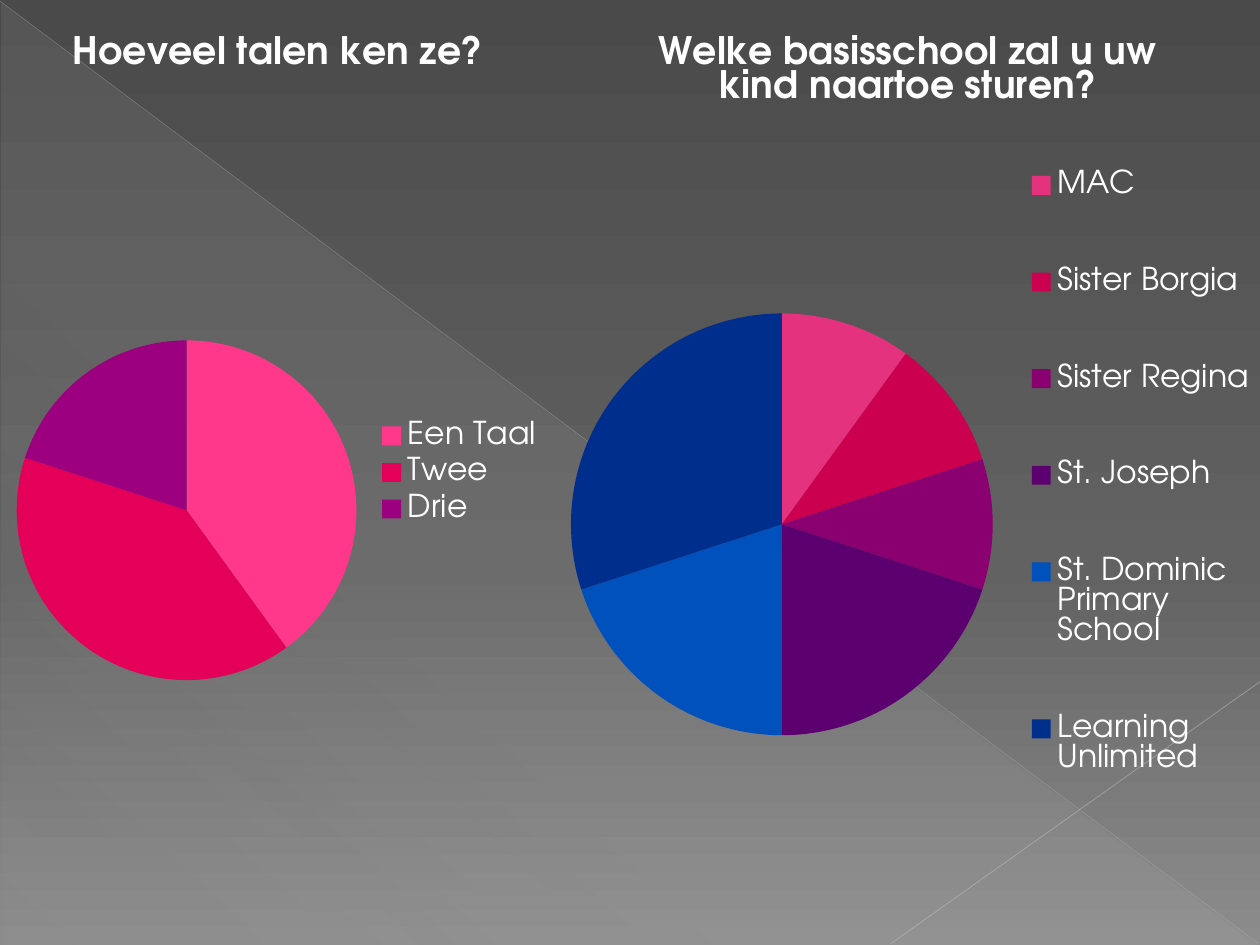
from lxml.etree import SubElement
from pptx import Presentation
from pptx.chart.data import CategoryChartData
from pptx.dml.color import RGBColor
from pptx.enum.chart import XL_CHART_TYPE, XL_LEGEND_POSITION
from pptx.enum.shapes import MSO_CONNECTOR, MSO_SHAPE
from pptx.oxml import parse_xml
from pptx.oxml.ns import nsdecls, qn
from pptx.util import Pt

FONT = "TeX Gyre Adventor"
WIDTH, HEIGHT = 720, 540
SPLIT = 318.24
COLORS = {
    "text": "FFFFFF", "diagonal": "BFBFBF", "corner": "C6C6C6",
    "pink": "FF388C", "red": "E40059", "purple": "9C007F",
    "dark pink": "E5327E", "dark red": "CB004F", "dark purple": "8A0070",
    "violet": "5C0070", "blue": "0051BC", "navy": "002E8C",
}
# Gradient stops: position in percent, colour, opacity in percent
BACKGROUND = [(0, "4A4A4A", 100), (60, "626262", 100), (100, "8C8C8C", 100)]
SHEEN = [(0, "D2D2D2", 10), (70, "D2D2D2", 8), (100, "D2D2D2", 1)]
# Start, end, colour, width, opacity in percent
LINES = [
    ((0, 0.72), (719.28, 539.28), "diagonal", 0.39, 35),
    ((720, 389.52), (509.04, 539.28), "corner", 0.47, 45),
]
# Layouts are x, y, width, height as fractions of the chart
CHARTS = [
    {
        "title": "Hoeveel talen ken ze?",
        "left": 0, "width": SPLIT,
        "slices": [("Een Taal", 40, "pink"), ("Twee", 40, "red"), ("Drie", 20, "purple")],
        "plot": (0.03, 0.36, 0.61, 0.36), "legend": None,
    },
    {
        "title": "Welke basisschool zal u uw kind naartoe sturen?",
        "left": SPLIT, "width": WIDTH - SPLIT,
        "slices": [
            ("MAC", 10, "dark pink"), ("Sister Borgia", 10, "dark red"),
            ("Sister Regina", 10, "dark purple"), ("St. Joseph", 20, "violet"),
            ("St. Dominic Primary School", 20, "blue"), ("Learning Unlimited", 30, "navy"),
        ],
        "plot": (0.02, 0.33, 0.6, 0.45), "legend": (0.66, 0.11, 0.34, 0.78),
    },
]


def rgb(name):
    return RGBColor.from_string(COLORS[name])


def set_gradient(properties, stops, angle):
    """Replace the solid fill in a properties element by a linear gradient."""
    marks = "".join(
        f'<a:gs pos="{position * 1000}"><a:srgbClr val="{color}">'
        f'<a:alpha val="{opacity * 1000}"/></a:srgbClr></a:gs>'
        for position, color, opacity in stops
    )
    gradient = parse_xml(
        f'<a:gradFill {nsdecls("a")} rotWithShape="1"><a:gsLst>{marks}</a:gsLst>'
        f'<a:lin ang="{angle * 60000}" scaled="0"/></a:gradFill>'
    )
    properties.replace(properties.find(qn("a:solidFill")), gradient)


def add_line(page, start, end, color, width, opacity):
    line = page.shapes.add_connector(MSO_CONNECTOR.STRAIGHT, *map(Pt, start + end))
    line.line.color.rgb = rgb(color)
    line.line.width = Pt(width)
    properties = line._element.spPr
    SubElement(next(properties.iter(qn("a:srgbClr"))), qn("a:alpha"), val=str(opacity * 1000))
    SubElement(properties, qn("a:effectLst"))


def set_layout(element, position, inner=False):
    """Give a plot area or legend a fixed place within its chart."""
    x, y, width, height = position
    target = '<c:layoutTarget val="inner"/>' if inner else ""
    layout = parse_xml(
        f'<c:layout {nsdecls("c")}><c:manualLayout>{target}'
        '<c:xMode val="edge"/><c:yMode val="edge"/>'
        f'<c:x val="{x}"/><c:y val="{y}"/><c:w val="{width}"/><c:h val="{height}"/>'
        "</c:manualLayout></c:layout>"
    )
    for previous in element.findall(qn("c:layout")):
        element.remove(previous)
    if inner:
        element.insert(0, layout)
    else:
        element.find(qn("c:legendPos")).addnext(layout)


def format_font(font, size, bold=False):
    font.name = FONT
    font.size = Pt(size)
    font.bold = bold
    font.color.rgb = rgb("text")


def write_text(frame, text, **style):
    frame.text = text
    format_font(frame.paragraphs[0].runs[0].font, **style)


def add_pie(page, title, left, width, slices, plot, legend):
    names, values, colors = zip(*slices)
    data = CategoryChartData()
    data.categories = names
    data.add_series("Series 1", values)
    chart = page.shapes.add_chart(
        XL_CHART_TYPE.PIE, Pt(left), 0, Pt(width), Pt(HEIGHT), data
    ).chart
    format_font(chart.font, size=18)
    chart.has_title = True
    write_text(chart.chart_title.text_frame, title, size=21.6, bold=True)
    chart.chart_title.include_in_layout = False
    chart.has_legend = True
    chart.legend.position = XL_LEGEND_POSITION.RIGHT
    chart.legend.include_in_layout = False
    format_font(chart.legend.font, size=18)
    pie = chart.plots[0]
    pie.vary_by_categories = True
    for index, color in enumerate(colors):
        fill = pie.series[0].points[index].format.fill
        fill.solid()
        fill.fore_color.rgb = rgb(color)
    set_layout(chart._chartSpace.chart.plotArea, plot, inner=True)
    if legend:
        set_layout(chart.legend._element, legend)


def main():
    deck = Presentation()
    deck.slide_width, deck.slide_height = Pt(WIDTH), Pt(HEIGHT)
    page = deck.slides.add_slide(deck.slide_layouts[6])
    page.background.fill.solid()
    set_gradient(page._element.cSld.bg.bgPr, BACKGROUND, 90)

    triangle = page.shapes.add_shape(
        MSO_SHAPE.RIGHT_TRIANGLE, Pt(0.72), Pt(1.44), Pt(718.56), Pt(538.56)
    )
    triangle.shadow.inherit = False
    triangle.line.fill.background()
    triangle.fill.solid()
    set_gradient(triangle._element.spPr, SHEEN, 133)

    for line in LINES:
        add_line(page, *line)
    for chart in CHARTS:
        add_pie(page, **chart)
    deck.save("out.pptx")


if __name__ == "__main__":
    main()
